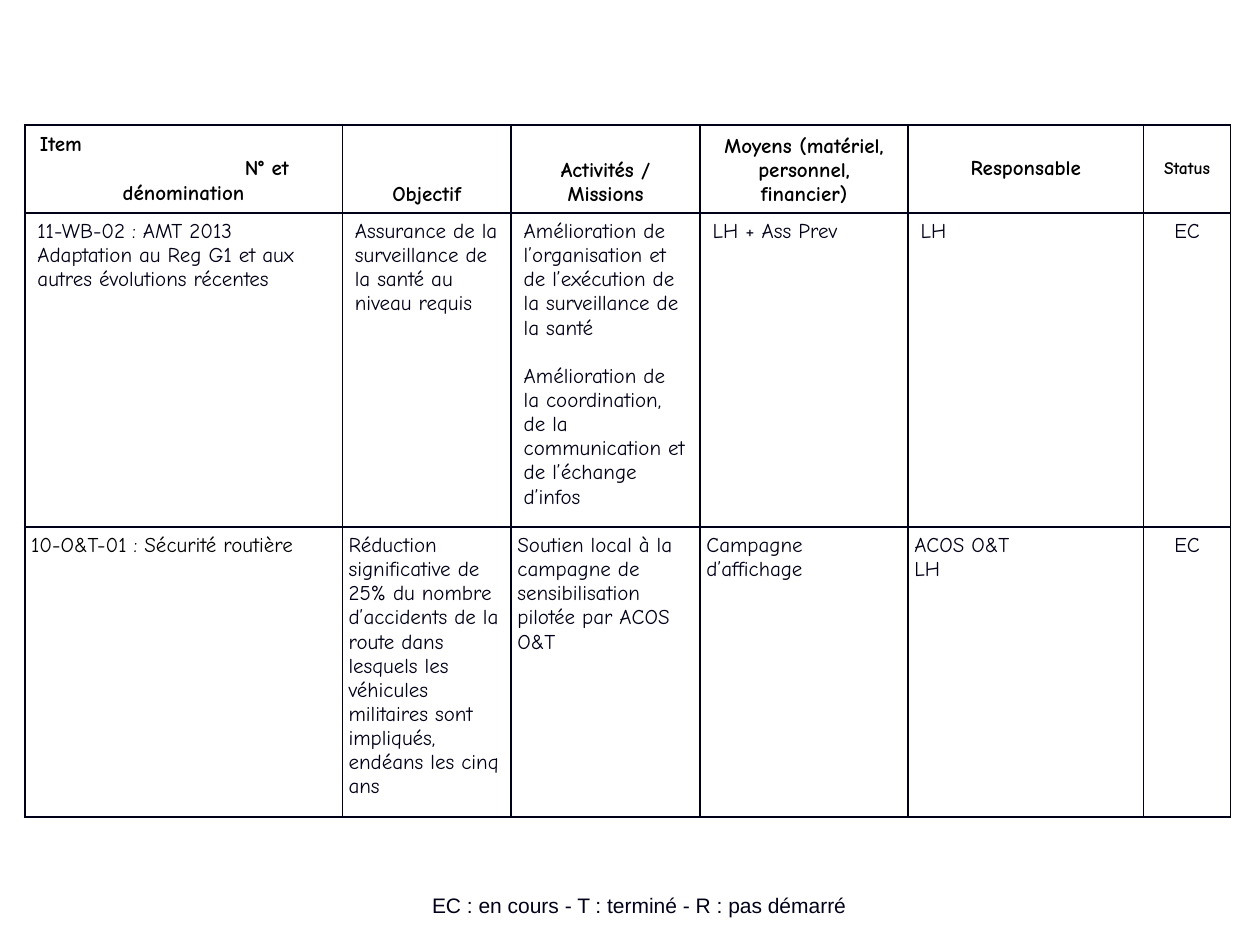
from dataclasses import dataclass

from lxml.etree import SubElement
from pptx import Presentation
from pptx.dml.color import RGBColor
from pptx.enum.text import MSO_ANCHOR, PP_ALIGN
from pptx.oxml.ns import qn
from pptx.util import Pt

INK = "000018"
BLACK = "000000"
TABLE_FONT = "Comic Neue"
COLUMN_WIDTHS = (181.4, 96.5, 108, 118.8, 134.6, 49.7)


@dataclass
class Line:
    text: str
    align: PP_ALIGN = PP_ALIGN.LEFT
    indent: float = 0
    before: float = 0


@dataclass
class Entry:
    lines: list[Line]
    anchor: MSO_ANCHOR = MSO_ANCHOR.TOP
    color: str = INK
    size: float = 12


@dataclass
class Row:
    height: float
    margin: float
    entries: list[Entry]
    bold: bool = False


def heading(text: str, anchor: MSO_ANCHOR, size: float = 12) -> Entry:
    return Entry([Line(text, PP_ALIGN.CENTER)], anchor, BLACK, size)


def body(*texts: str, color: str = INK, before: float = 0) -> Entry:
    lines = [Line(text, before=before if index else 0) for index, text in enumerate(texts)]
    return Entry(lines, color=color)


def status(text: str) -> Entry:
    return Entry([Line(text, PP_ALIGN.CENTER)])


ROWS = [
    Row(48.4, 7.2, [
        Entry([
            Line("Item", indent=1.4),
            Line("N° et", indent=118.5),
            Line("dénomination", PP_ALIGN.CENTER),
        ], MSO_ANCHOR.MIDDLE, BLACK),
        heading("Objectif", MSO_ANCHOR.BOTTOM),
        heading("Activités / Missions", MSO_ANCHOR.BOTTOM),
        heading("Moyens (matériel, personnel, financier)", MSO_ANCHOR.BOTTOM),
        heading("Responsable", MSO_ANCHOR.MIDDLE),
        heading("Status", MSO_ANCHOR.MIDDLE, 10),
    ], bold=True),
    Row(173.1, 7.2, [
        body("11-WB-02 : AMT 2013", "Adaptation au Reg G1 et aux autres évolutions récentes"),
        body("Assurance de la surveillance de la santé au niveau requis"),
        body(
            "Amélioration de l’organisation et de l’exécution de la surveillance de la santé",
            "Amélioration de la coordination, de la communication et de l’échange d’infos",
            before=13.8,
        ),
        body("LH + Ass Prev"),
        body("LH"),
        status("EC"),
    ]),
    Row(159.4, 3.6, [
        body("10-O&T-01 : Sécurité routière", color=BLACK),
        body("Réduction significative de 25% du nombre d’accidents de la route dans "
             "lesquels les véhicules militaires sont impliqués, endéans les cinq ans"),
        body("Soutien local à la campagne de sensibilisation pilotée par ACOS O&T"),
        body("Campagne d’affichage"),
        body("ACOS O&T", "LH"),
        status("EC"),
    ]),
]


def rgb(value: str) -> RGBColor:
    return RGBColor.from_string(value)


def write_lines(frame, entry: Entry, font_name: str, bold: bool) -> None:
    frame.text = "\n".join(line.text for line in entry.lines)
    for para, line in zip(frame.paragraphs, entry.lines):
        para.alignment = line.align
        if line.before:
            para.space_before = Pt(line.before)
        if line.indent:
            para._p.get_or_add_pPr().set("marL", str(Pt(line.indent)))
        for span in para.runs:
            span.font.name = font_name
            span.font.size = Pt(entry.size)
            span.font.bold = bold
            span.font.color.rgb = rgb(entry.color)


def add_borders(cell, color: str, width: float) -> None:
    properties = cell._tc.get_or_add_tcPr()
    for side in ("a:lnL", "a:lnR", "a:lnT", "a:lnB"):
        border = SubElement(properties, qn(side), w=str(Pt(width)))
        fill = SubElement(border, qn("a:solidFill"))
        SubElement(fill, qn("a:srgbClr"), val=color)


def fill_cell(cell, entry: Entry, row: Row) -> None:
    add_borders(cell, INK, 1)
    cell.fill.background()
    cell.margin_left = cell.margin_right = Pt(row.margin)
    cell.margin_top = cell.margin_bottom = Pt(3.6)
    cell.vertical_anchor = entry.anchor
    write_lines(cell.text_frame, entry, TABLE_FONT, row.bold)


def add_action_table(page) -> None:
    frame = page.shapes.add_table(
        len(ROWS), len(COLUMN_WIDTHS), Pt(14.2), Pt(71.4),
        Pt(sum(COLUMN_WIDTHS)), Pt(sum(row.height for row in ROWS)),
    )
    table = frame.table
    table.first_row = True
    table.horz_banding = False
    for column, width in zip(table.columns, COLUMN_WIDTHS):
        column.width = Pt(width)
    for row_index, row in enumerate(ROWS):
        table.rows[row_index].height = Pt(row.height)
        for column_index, entry in enumerate(row.entries):
            fill_cell(table.cell(row_index, column_index), entry, row)


def add_legend(page) -> None:
    box = page.shapes.add_textbox(Pt(167), Pt(491.8), Pt(396.7), Pt(36))
    frame = box.text_frame
    frame.word_wrap = True
    frame.vertical_anchor = MSO_ANCHOR.BOTTOM
    entry = Entry([Line("EC : en cours - T : terminé - R : pas démarré", PP_ALIGN.CENTER)])
    write_lines(frame, entry, "Arial", False)


def main() -> None:
    deck = Presentation()
    deck.slide_width, deck.slide_height = Pt(720), Pt(540)
    page = deck.slides.add_slide(deck.slide_layouts[6])
    add_legend(page)
    add_action_table(page)
    deck.save("out.pptx")


if __name__ == "__main__":
    main()
